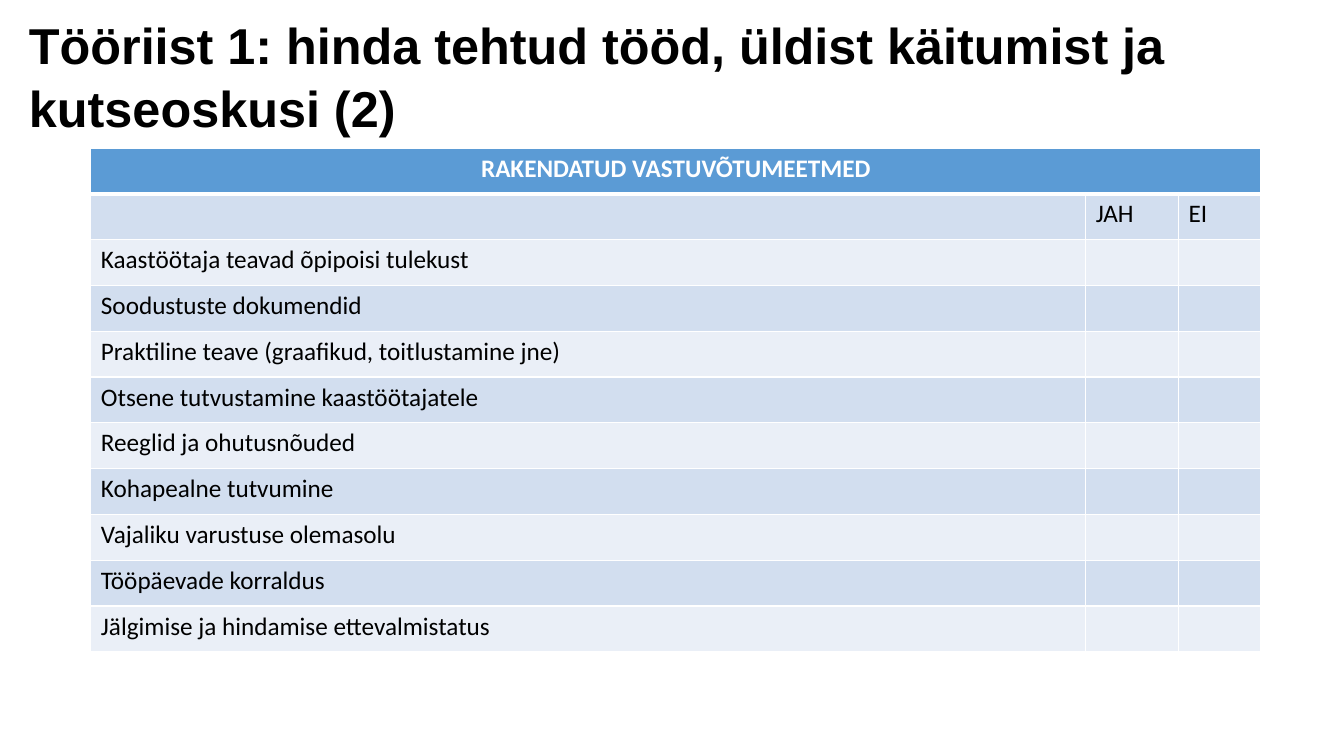
from dataclasses import dataclass

import pptx
import pptx.dml.color
import pptx.enum.text
import pptx.oxml
import pptx.oxml.ns
import pptx.util

Cm = pptx.util.Cm
Pt = pptx.util.Pt
RGB = pptx.dml.color.RGBColor.from_string
ALIGN = pptx.enum.text.PP_ALIGN


@dataclass(frozen=True)
class Theme:
    text: str = "000000"
    white: str = "FFFFFF"
    header: str = "5B9BD5"
    bands: tuple = ("EAEFF7", "D2DEEF")
    title_font: str = "Arial"
    table_font: str = "Calibri"
    title_size: int = 36
    table_size: int = 18


theme = Theme()


def write_text(tf, text, *, font=theme.table_font, size=theme.table_size,
               color=theme.text, bold=False, align=ALIGN.LEFT, spacing=1.0):
    p = tf.paragraphs[0]
    p.alignment = align
    p.line_spacing = spacing
    p.font.size = Pt(size)
    if text:
        r = p.add_run()
        r.text = text
        r.font.name = font
        r.font.size = Pt(size)
        r.font.bold = bold
        r.font.color.rgb = RGB(color)


def style_cell(cell, fill, **widths):
    """Fill a cell and draw white borders; widths in points by side (L, R, T, B)."""
    cell.fill.solid()
    cell.fill.fore_color.rgb = RGB(fill)
    tc_pr = cell._tc.get_or_add_tcPr()
    for i, side in enumerate("LRTB"):
        tc_pr.insert(i, pptx.oxml.parse_xml(
            f'<a:ln{side} {pptx.oxml.ns.nsdecls("a")} w="{Pt(widths.get(side, 1))}">'
            f'<a:solidFill><a:srgbClr val="{theme.white}"/></a:solidFill></a:ln{side}>'))


prs = pptx.Presentation()
prs.slide_width = Cm(33.87)
prs.slide_height = Cm(19.05)
s = prs.slides.add_slide(prs.slide_layouts[6])

# Title
title = s.shapes.add_textbox(Cm(0.48), Cm(0.15), Cm(31.27), Cm(3.33))
title.text_frame.word_wrap = True
write_text(title.text_frame,
           "Tööriist 1: hinda tehtud tööd, üldist käitumist ja kutseoskusi (2)",
           font=theme.title_font, size=theme.title_size, bold=True, spacing=1.05)

# Checklist table
measures = [
    "Kaastöötaja teavad õpipoisi tulekust",
    "Soodustuste dokumendid",
    "Praktiline teave (graafikud, toitlustamine jne)",
    "Otsene tutvustamine kaastöötajatele",
    "Reeglid ja ohutusnõuded",
    "Kohapealne tutvumine",
    "Vajaliku varustuse olemasolu",
    "Tööpäevade korraldus",
    "Jälgimise ja hindamise ettevalmistatus",
]
rows = [("RAKENDATUD VASTUVÕTUMEETMED", "", ""), ("", "JAH", "EI")]
rows += [(measure, "", "") for measure in measures]
col_widths = [25.07, 2.34, 2.08]
table_height = 12.7

table = s.shapes.add_table(len(rows), len(col_widths), Cm(2.29), Cm(3.73),
                           Cm(sum(col_widths)), Cm(table_height)).table
for column, width in zip(table.columns, col_widths):
    column.width = Cm(width)
for row in table.rows:
    row.height = Cm(table_height / len(rows))
table.cell(0, 0).merge(table.cell(0, len(col_widths) - 1))

for i, texts in enumerate(rows):
    for j, text in enumerate(texts):
        cell = table.cell(i, j)
        if i == 0:
            style_cell(cell, theme.header, B=3)
            write_text(cell.text_frame, text, color=theme.white, bold=True,
                       align=ALIGN.CENTER)
        else:
            style_cell(cell, theme.bands[i % 2], T=3 if i == 1 else 1)
            write_text(cell.text_frame, text)

prs.save("out.pptx")
